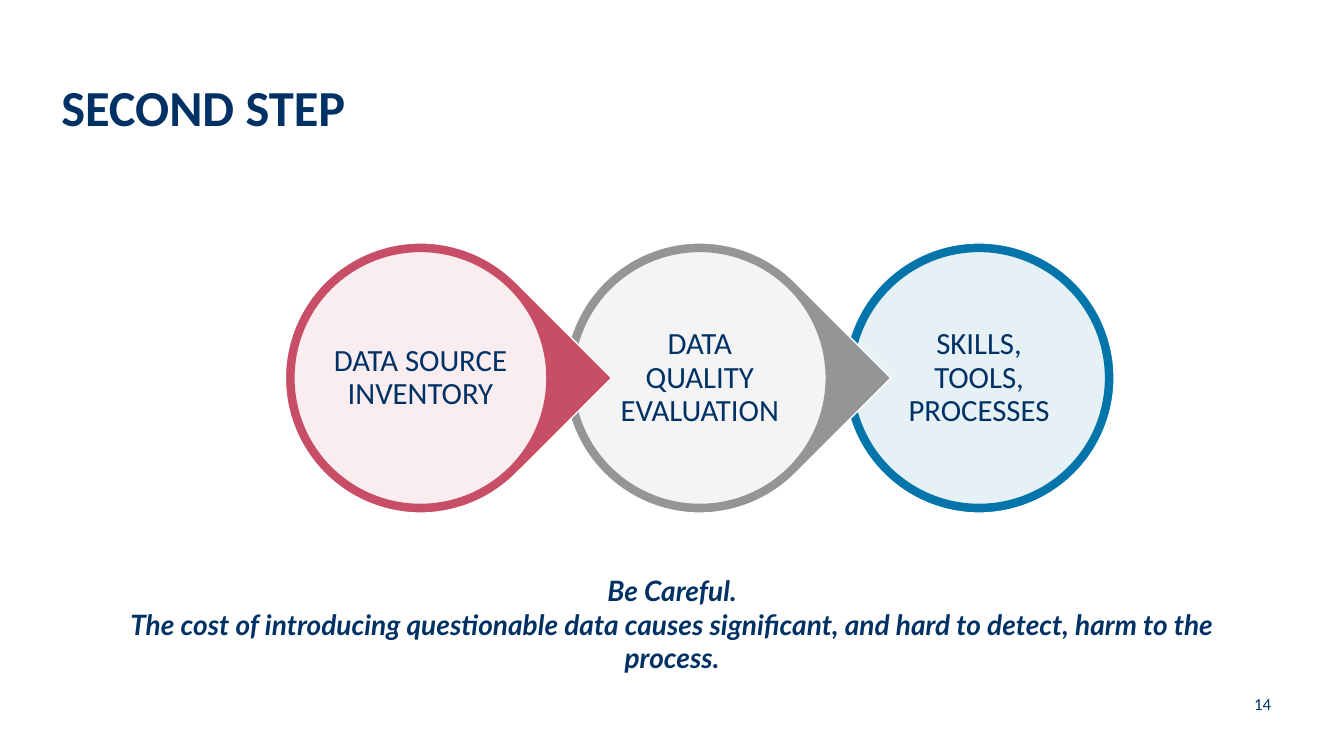
from dataclasses import dataclass

from lxml.etree import SubElement
from pptx import Presentation
from pptx.dml.color import RGBColor
from pptx.enum.shapes import MSO_SHAPE as Shape
from pptx.enum.text import MSO_ANCHOR as Anchor, PP_ALIGN as Align
from pptx.oxml.ns import qn
from pptx.util import Inches, Pt


@dataclass(frozen=True)
class Theme:
    """Colours, fonts and type sizes of the slide."""
    navy: str = "003165"
    white: str = "FFFFFF"
    red: str = "C74E66"
    grey: str = "939597"
    blue: str = "0375AB"
    font: str = "Calibri"
    warning_font: str = "Lato"
    title_size: int = 36
    step_size: int = 22
    warning_size: int = 20
    number_size: int = 12


THEME = Theme()


def add_text(page, left, top, width, height, lines, size, font=THEME.font, bold=False,
             italic=False, align=Align.LEFT, anchor=Anchor.TOP, inset=None, spacing=None):
    """Add a wrapped text box with one paragraph per line."""
    box = page.shapes.add_textbox(Inches(left), Inches(top), Inches(width), Inches(height))
    frame = box.text_frame
    frame.word_wrap = True
    frame.vertical_anchor = anchor
    if inset is not None:
        frame.margin_left = frame.margin_right = Inches(inset)
        frame.margin_top = frame.margin_bottom = Inches(inset)
    frame.text = "\n".join(lines)
    for para in frame.paragraphs:
        para.alignment = align
        para.line_spacing = spacing
        para.font.name = font
        para.font.size = Pt(size)
        para.font.bold = bold
        para.font.italic = italic
        para.font.color.rgb = RGBColor.from_string(THEME.navy)


def add_disc(page, kind, center_x, center_y, size, fill, line, opacity=100):
    """Add a round shape centred on a point."""
    disc = page.shapes.add_shape(kind, Inches(center_x - size / 2), Inches(center_y - size / 2),
                                 Inches(size), Inches(size))
    disc.shadow.inherit = False
    disc.fill.solid()
    disc.fill.fore_color.rgb = RGBColor.from_string(fill)
    disc.line.color.rgb = RGBColor.from_string(line)
    disc.line.width = Pt(1)
    if opacity < 100:
        color = disc.fill._xPr.find(qn("a:solidFill"))[0]
        SubElement(color, qn("a:alpha")).set("val", str(opacity * 1000))
    return disc


def add_step(page, center_x, center_y, label, color, is_last):
    """Add a ringed step that points to the next one unless it is last."""
    kind = Shape.OVAL if is_last else Shape.TEAR
    ring = add_disc(page, kind, center_x, center_y, 2.68, color, THEME.white)
    ring.rotation = 0 if is_last else 45
    add_disc(page, Shape.OVAL, center_x, center_y, 2.51, THEME.white, color, opacity=90)
    side = 1.79
    add_text(page, center_x - side / 2, center_y - side / 2, side, side, [label],
             THEME.step_size, align=Align.CENTER, anchor=Anchor.MIDDLE, inset=0.03, spacing=0.9)


def main():
    """Build the slide and save it."""
    deck = Presentation()
    deck.slide_width, deck.slide_height = Inches(13.33), Inches(7.5)
    page = deck.slides.add_slide(deck.slide_layouts[6])

    add_text(page, 12.34, 6.86, 0.49, 0.25, ["14"], THEME.number_size, anchor=Anchor.MIDDLE)
    add_text(page, 0.51, 0.14, 12.14, 1.26, ["SECOND STEP"], THEME.title_size,
             bold=True, anchor=Anchor.BOTTOM)

    steps = [("DATA SOURCE INVENTORY", THEME.red),
             ("DATA QUALITY EVALUATION", THEME.grey),
             ("SKILLS, TOOLS, PROCESSES", THEME.blue)]
    last = len(steps) - 1
    for index, (label, color) in reversed(list(enumerate(steps))):
        add_step(page, 4.17 + 2.77 * index, 3.75, label, color, index == last)

    warning = ["Be Careful.",
               "The cost of introducing questionable data causes significant, "
               "and hard to detect, harm to the process."]
    add_text(page, 0.72, 5.64, 11.89, 0.77, warning, THEME.warning_size,
             font=THEME.warning_font, bold=True, italic=True, align=Align.CENTER)

    deck.save("out.pptx")


if __name__ == "__main__":
    main()
